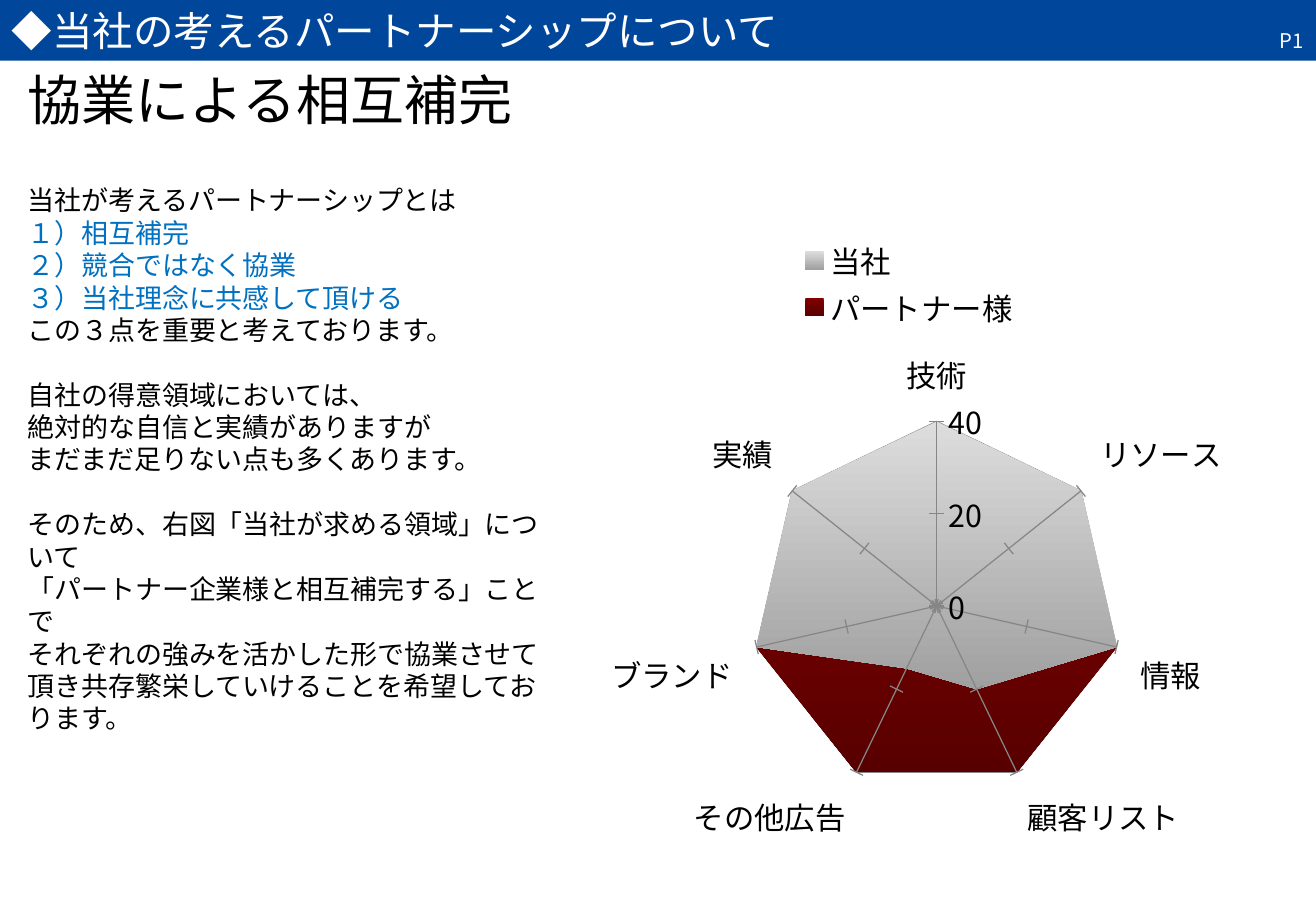
from lxml import etree
from pptx import Presentation
from pptx.chart.data import CategoryChartData
from pptx.dml.color import RGBColor
from pptx.enum.chart import XL_CHART_TYPE, XL_LEGEND_POSITION, XL_TICK_MARK
from pptx.enum.shapes import MSO_SHAPE
from pptx.enum.text import MSO_ANCHOR, PP_ALIGN
from pptx.oxml.ns import qn
from pptx.util import Cm, Pt

RADAR = XL_CHART_TYPE.RADAR_FILLED
LEGEND_RIGHT = XL_LEGEND_POSITION.RIGHT
TICK_CROSS, TICK_OUTSIDE = XL_TICK_MARK.CROSS, XL_TICK_MARK.OUTSIDE
RECTANGLE = MSO_SHAPE.RECTANGLE
TOP, MIDDLE = MSO_ANCHOR.TOP, MSO_ANCHOR.MIDDLE
LEFT, RIGHT = PP_ALIGN.LEFT, PP_ALIGN.RIGHT

FONT = "Noto Sans CJK JP"
BLACK, WHITE, NAVY, BLUE, GRAY = "000000", "FFFFFF", "00469B", "0070C0", "868686"
PAGE_WIDTH, PAGE_HEIGHT = Cm(27.51), Cm(19.05)
BAR_HEIGHT = Cm(1.27)
LINE_FACTOR = 1.2
BODY_SIZE = 16
BODY_GAP = BODY_SIZE * LINE_FACTOR

# Each block is a list of (text, colour) lines; a gap separates blocks.
BODY_BLOCKS = [
    [
        ("当社が考えるパートナーシップとは", BLACK),
        ("１）相互補完", BLUE),
        ("２）競合ではなく協業", BLUE),
        ("３）当社理念に共感して頂ける", BLUE),
        ("この３点を重要と考えております。", BLACK),
    ],
    [
        ("自社の得意領域においては、", BLACK),
        ("絶対的な自信と実績がありますが", BLACK),
        ("まだまだ足りない点も多くあります。", BLACK),
    ],
    [
        ("そのため、右図「当社が求める領域」について", BLACK),
        ("「パートナー企業様と相互補完する」ことで", BLACK),
        ("それぞれの強みを活かした形で協業させて頂き共存繁栄していけることを希望しております。", BLACK),
    ],
]

CATEGORIES = ["技術", "リソース", "情報", "顧客リスト", "その他広告", "ブランド", "実績"]
# name, values, top colour, bottom colour
SERIES = [
    ("当社", [40, 40, 40, 20, 15, 40, 40], "DDDDDD", "A0A0A0"),
    ("パートナー様", [10, 10, 40, 40, 40, 40, 40], "800000", "580000"),
]


def rgb(value):
    return RGBColor.from_string(value)


def write(para, text, size=BODY_SIZE, color=BLACK, align=LEFT, before=0, exact=True):
    """Fill one paragraph; exact fixes its line height from the text size."""
    para.alignment = align
    para.space_before = Pt(before)
    if exact:
        para.line_spacing = Pt(size * LINE_FACTOR)
    span = para.add_run()
    span.text = text
    span.font.size = Pt(size)
    span.font.name = FONT
    span.font.color.rgb = rgb(color)


def add_title_bar(page, text):
    bar = page.shapes.add_shape(RECTANGLE, 0, 0, PAGE_WIDTH, BAR_HEIGHT)
    bar.shadow.inherit = False
    bar.fill.solid()
    bar.fill.fore_color.rgb = rgb(NAVY)
    bar.line.fill.background()
    bar.text_frame.vertical_anchor = MIDDLE
    write(bar.text_frame.paragraphs[0], text, size=24, color=WHITE, exact=False)


def add_page_number(page, text):
    box = page.shapes.add_textbox(Cm(21.77), Cm(0.46), Cm(5.74), BAR_HEIGHT)
    box.text_frame.word_wrap = True
    write(box.text_frame.paragraphs[0], text, size=12, color=WHITE, align=RIGHT, exact=False)


def add_message(page, heading, blocks):
    box = page.shapes.add_textbox(Cm(0.58), Cm(1.4), Cm(10.77), Cm(14))
    frame = box.text_frame
    frame.word_wrap = True
    frame.vertical_anchor = TOP
    frame.margin_left = frame.margin_right = frame.margin_top = frame.margin_bottom = 0
    write(frame.paragraphs[0], heading, size=32)
    for block_index, block in enumerate(blocks):
        gap = BODY_GAP if block_index else 31
        for line_index, (text, color) in enumerate(block):
            write(frame.add_paragraph(), text, color=color, before=0 if line_index else gap)


def set_layout(parent, index, inner=False, **fractions):
    """Place a chart part by fractions (x, y, w, h) of the chart area."""
    for old in parent.findall(qn("c:layout")):
        parent.remove(old)
    layout = etree.Element(qn("c:layout"))
    manual = etree.SubElement(layout, qn("c:manualLayout"))
    if inner:
        etree.SubElement(manual, qn("c:layoutTarget")).set("val", "inner")
    for name in ("xMode", "yMode"):
        etree.SubElement(manual, qn(f"c:{name}")).set("val", "edge")
    for name in "xywh":
        etree.SubElement(manual, qn(f"c:{name}")).set("val", str(fractions[name]))
    parent.insert(index, layout)


def add_radar(page):
    data = CategoryChartData()
    data.categories = CATEGORIES
    for name, values, _, _ in SERIES:
        data.add_series(name, values)
    chart = page.shapes.add_chart(RADAR, Cm(11.86), Cm(4.62), Cm(19.3), Cm(15.49), data).chart
    chart.has_title = False
    chart.font.size = Pt(18)
    chart.font.name = FONT
    chart.font.color.rgb = rgb(BLACK)

    plot = chart.plots[0]
    plot.vary_by_categories = False
    for series, (_, _, top, bottom) in zip(plot.series, SERIES):
        fill = series.format.fill
        fill.gradient()
        fill.gradient_angle = 270
        for stop, color in zip(fill.gradient_stops, (top, bottom)):
            stop.color.rgb = rgb(color)
        series.format.line.fill.background()

    scale = chart.value_axis
    scale.minimum_scale, scale.maximum_scale, scale.major_unit = 0, 40, 20
    scale.major_tick_mark = TICK_CROSS
    chart.category_axis.major_tick_mark = TICK_OUTSIDE
    for axis in (scale, chart.category_axis):
        axis.format.line.color.rgb = rgb(GRAY)

    chart.has_legend = True
    chart.legend.position = LEGEND_RIGHT
    chart.legend.include_in_layout = False
    plot_area = next(chart.element.iter(qn("c:plotArea")))
    legend = next(chart.element.iter(qn("c:legend")))
    set_layout(plot_area, 0, inner=True, x=0.2, y=0.27, w=0.4, h=0.5)
    set_layout(legend, 1, x=0.25, y=0.02, w=0.24, h=0.13)
    return chart


def set_east_asian_font(root):
    """Give Japanese text the same typeface as the Latin text."""
    for latin in list(root.iter(qn("a:latin"))):
        east_asian = etree.Element(qn("a:ea"))
        east_asian.set("typeface", FONT)
        latin.addnext(east_asian)


def main():
    deck = Presentation()
    deck.slide_width, deck.slide_height = PAGE_WIDTH, PAGE_HEIGHT
    page = deck.slides.add_slide(deck.slide_layouts[6])
    add_title_bar(page, "◆当社の考えるパートナーシップについて")
    add_message(page, "協業による相互補完", BODY_BLOCKS)
    add_page_number(page, "P1")
    chart = add_radar(page)
    for root in (page.element, chart.element):
        set_east_asian_font(root)
    deck.save("out.pptx")


if __name__ == "__main__":
    main()
